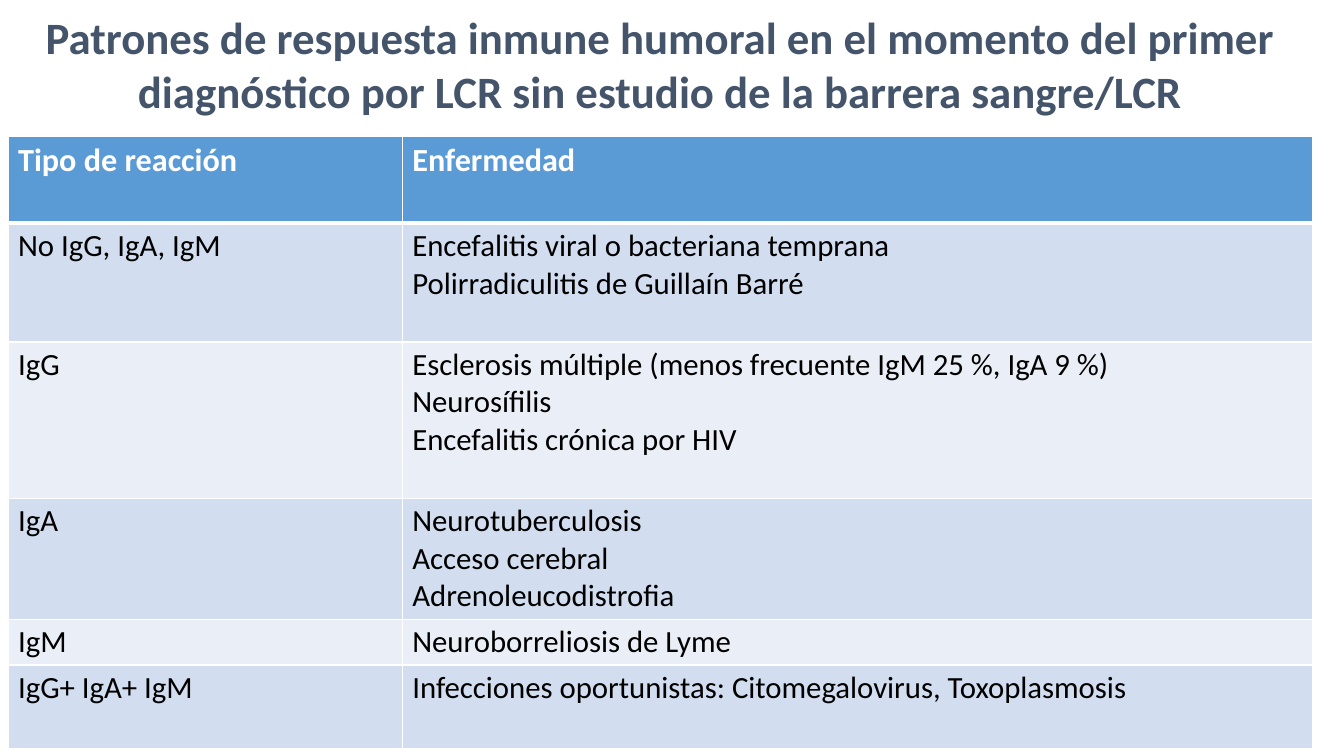
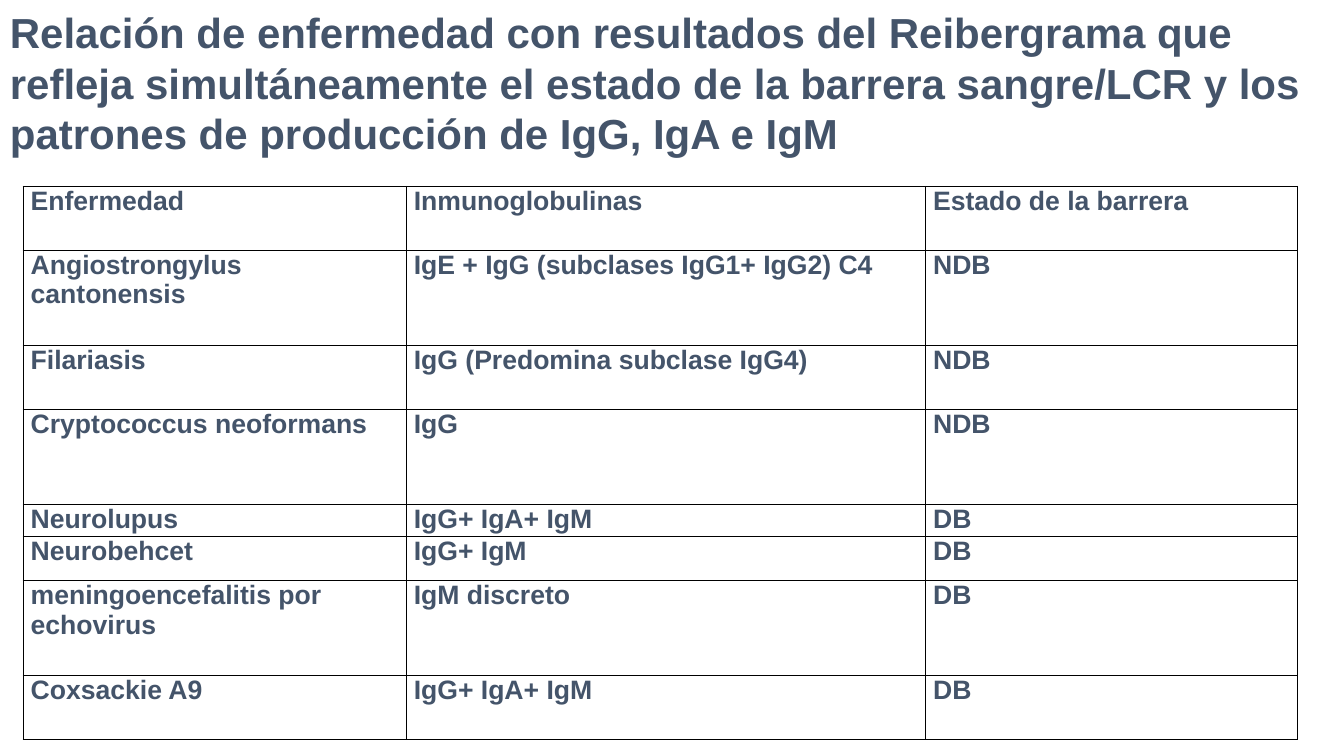
"""Build two slides with tables on humoral immune patterns in cerebrospinal fluid."""
from lxml import etree
from pptx import Presentation
from pptx.dml.color import RGBColor
from pptx.enum.text import MSO_AUTO_SIZE, PP_ALIGN
from pptx.oxml.ns import qn
from pptx.util import Pt

PX = 2286
LEFT, CENTER = PP_ALIGN.LEFT, PP_ALIGN.CENTER
GROW = MSO_AUTO_SIZE.SHAPE_TO_FIT_TEXT
SLATE, WHITE, BLACK = "44546A", "FFFFFF", "000000"
BLUE, BAND_DARK, BAND_LIGHT = "5B9BD5", "D2DEEF", "EAEFF7"


def color(value):
    """Turn a hex string into a colour."""
    return RGBColor.from_string(value)


def write_text(frame, text, size, font, ink=SLATE, bold=True, align=LEFT):
    """Write each line of the text as a formatted paragraph."""
    frame.word_wrap = True
    for index, line in enumerate(text.split("\n")):
        para = frame.add_paragraph() if index else frame.paragraphs[0]
        para.alignment = align
        span = para.add_run()
        span.text = line
        span.font.size = Pt(size)
        span.font.name = font
        span.font.bold = bold
        span.font.color.rgb = color(ink)


reaction_page = {
    "title": "Patrones de respuesta inmune humoral en el momento del primer "
             "diagnóstico por LCR sin estudio de la barrera sangre/LCR",
    "title_box": (0, 20, 5240, 472),
    "title_format": {"size": 32, "font": "Calibri", "align": CENTER},
    "corner": (32, 540),
    "columns": [1564, 3612],
    "heights": [346, 471, 620, 480, 182, 331],
    "margins": (40, 17),
    "border": WHITE,
    "header_rule": 3,
    "fills": [BLUE, BAND_DARK, BAND_LIGHT],
    "header_format": {"size": 23, "font": "Calibri", "ink": WHITE},
    "body_format": {"size": 22, "font": "Calibri", "ink": BLACK, "bold": False},
    "rows": [
        ("Tipo de reacción", "Enfermedad"),
        ("No IgG, IgA, IgM",
         "Encefalitis viral o bacteriana temprana\nPolirradiculitis de Guillaín Barré"),
        ("IgG",
         "Esclerosis múltiple (menos frecuente IgM 25 %, IgA 9 %)\n"
         "Neurosífilis\nEncefalitis crónica por HIV"),
        ("IgA", "Neurotuberculosis\nAcceso cerebral\nAdrenoleucodistrofia"),
        ("IgM", "Neuroborreliosis de Lyme"),
        ("IgG+ IgA+ IgM", "Infecciones oportunistas: Citomegalovirus, Toxoplasmosis"),
    ],
}

barrier_format = {"size": 19, "font": "Arial"}
barrier_page = {
    "title": "Relación de enfermedad con resultados del Reibergrama que refleja "
             "simultáneamente el estado de la barrera sangre/LCR y los patrones "
             "de producción de IgG, IgA e IgM",
    "title_box": (0, 8, 5332, 648),
    "title_format": {"size": 30, "font": "Arial"},
    "corner": (92, 740),
    "columns": [1520, 2060, 1476],
    "heights": [253, 378, 253, 378, 126, 175, 378, 253],
    "margins": (30, 0),
    "border": BLACK,
    "header_rule": 1,
    "fills": None,
    "header_format": barrier_format,
    "body_format": barrier_format,
    "rows": [
        ("Enfermedad", "Inmunoglobulinas", "Estado de la barrera"),
        ("Angiostrongylus cantonensis", "IgE + IgG (subclases IgG1+ IgG2) C4", "NDB"),
        ("Filariasis", "IgG (Predomina subclase IgG4)", "NDB"),
        ("Cryptococcus neoformans", "IgG", "NDB"),
        ("Neurolupus", "IgG+ IgA+ IgM", "DB"),
        ("Neurobehcet", "IgG+ IgM", "DB"),
        ("meningoencefalitis por echovirus", "IgM discreto", "DB"),
        ("Coxsackie A9", "IgG+ IgA+ IgM", "DB"),
    ],
}

deck = Presentation()
deck.slide_width, deck.slide_height = 5332 * PX, 3000 * PX

for content in (reaction_page, barrier_page):
    page = deck.slides.add_slide(deck.slide_layouts[6])

    title_box = page.shapes.add_textbox(*(length * PX for length in content["title_box"]))
    write_text(title_box.text_frame, content["title"], **content["title_format"])
    title_box.text_frame.auto_size = GROW

    rows, columns, heights = content["rows"], content["columns"], content["heights"]
    left, top = content["corner"]
    table = page.shapes.add_table(
        len(rows), len(columns),
        left * PX, top * PX, sum(columns) * PX, sum(heights) * PX,
    ).table
    table.first_row = table.horz_banding = False
    for column, width in zip(table.columns, columns):
        column.width = width * PX
    for row, height in zip(table.rows, heights):
        row.height = height * PX

    side_margin, end_margin = content["margins"]
    for row_index, texts in enumerate(rows):
        text_format = content["body_format" if row_index else "header_format"]
        for column_index, text in enumerate(texts):
            cell = table.cell(row_index, column_index)
            cell.margin_left = cell.margin_right = side_margin * PX
            cell.margin_top = cell.margin_bottom = end_margin * PX
            write_text(cell.text_frame, text, **text_format)

            properties = cell._tc.get_or_add_tcPr()
            for edge in ("lnL", "lnR", "lnT", "lnB"):
                under_header = (row_index, edge) in ((0, "lnB"), (1, "lnT"))
                weight = content["header_rule"] if under_header else 1
                line = etree.SubElement(properties, qn(f"a:{edge}"), w=str(Pt(weight)))
                paint = etree.SubElement(line, qn("a:solidFill"))
                etree.SubElement(paint, qn("a:srgbClr"), val=content["border"])

            if content["fills"]:
                header_fill, *bands = content["fills"]
                cell.fill.solid()
                cell.fill.fore_color.rgb = color(
                    bands[(row_index - 1) % 2] if row_index else header_fill)
            else:
                cell.fill.background()

deck.save("out.pptx")
